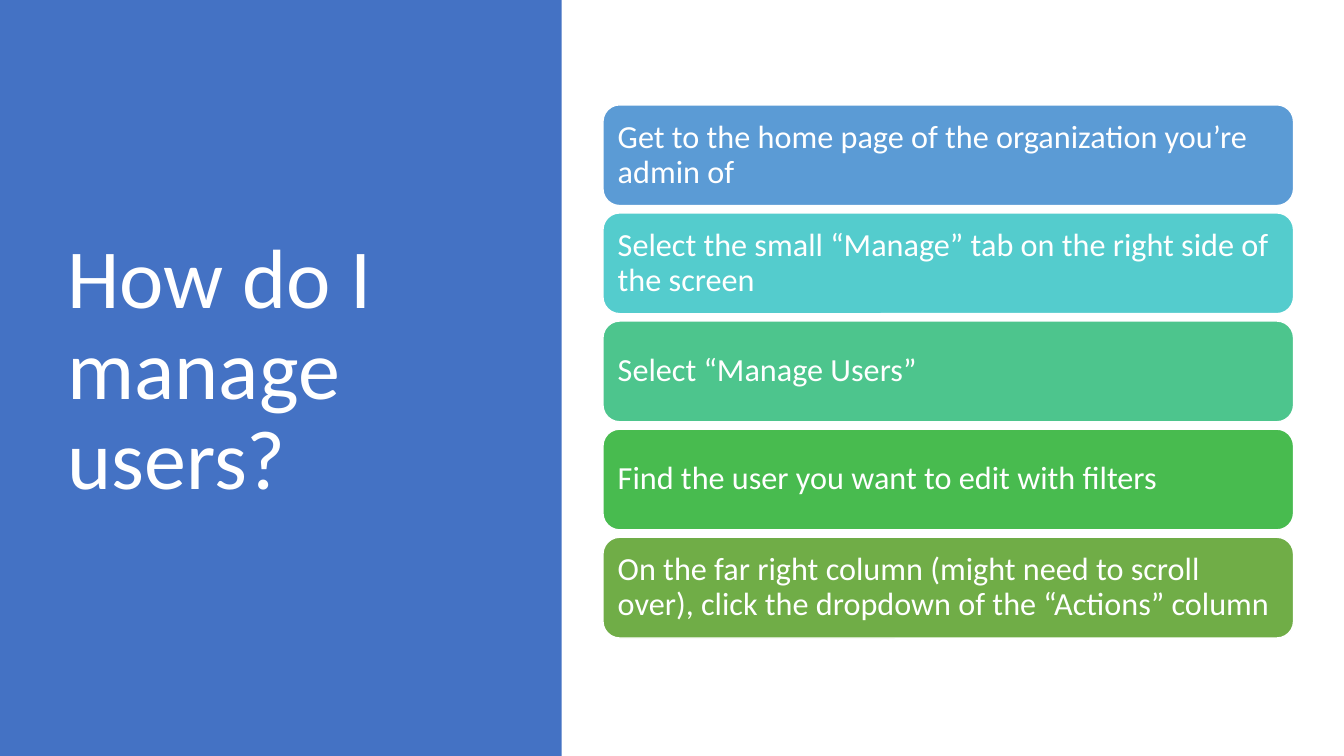
from pptx import Presentation
from pptx.dml.color import RGBColor
from pptx.enum import shapes, text
from pptx.util import Inches, Pt

WHITE = RGBColor(0xFF, 0xFF, 0xFF)
BLUE = RGBColor(0x44, 0x72, 0xC4)
SKY = RGBColor(0x5B, 0x9B, 0xD5)
AQUA = RGBColor(0x54, 0xCC, 0xCD)
MINT = RGBColor(0x4D, 0xC5, 0x8D)
GREEN = RGBColor(0x48, 0xBB, 0x4F)
OLIVE = RGBColor(0x70, 0xAD, 0x47)

TITLE = "How do I manage users?"
STEPS = [
    ("Get to the home page of the organization you’re admin of", SKY),
    ("Select the small “Manage” tab on the right side of the screen", AQUA),
    ("Select “Manage Users”", MINT),
    ("Find the user you want to edit with filters", GREEN),
    ("On the far right column (might need to scroll over), "
     "click the dropdown of the “Actions” column", OLIVE),
]
LEFT, TOP, WIDTH, HEIGHT, PITCH = 5.98, 1.04, 6.85, 1, 1.0725


def write(shape, words, size):
    frame = shape.text_frame
    frame.text = words
    frame.word_wrap = True
    frame.auto_size = text.MSO_AUTO_SIZE.NONE
    frame.vertical_anchor = text.MSO_ANCHOR.MIDDLE
    para = frame.paragraphs[0]
    para.alignment = text.PP_ALIGN.LEFT
    para.line_spacing = 0.9
    font = para.runs[0].font
    font.name = "Calibri"
    font.size = Pt(size)
    font.color.rgb = WHITE
    return frame


def block(slide, kind, box, fill):
    shape = slide.shapes.add_shape(kind, *map(Inches, box))
    shape.shadow.inherit = False
    shape.fill.solid()
    shape.fill.fore_color.rgb = fill
    shape.line.fill.background()
    return shape


def main():
    deck = Presentation()
    deck.slide_width, deck.slide_height = Inches(13.33), Inches(7.5)
    slide = deck.slides.add_slide(deck.slide_layouts[5])

    title = slide.shapes.title
    title.left, title.top = Inches(0.57), Inches(0.68)
    title.width, title.height = Inches(4.16), Inches(6.02)
    write(title, TITLE, 60)

    panel = block(slide, shapes.MSO_SHAPE.RECTANGLE, (0, 0, 5.57, 7.5), BLUE)
    title.element.addprevious(panel.element)

    for i, (words, fill) in enumerate(STEPS):
        box = (LEFT, TOP + i * PITCH, WIDTH, HEIGHT)
        step = block(slide, shapes.MSO_SHAPE.ROUNDED_RECTANGLE, box, fill)
        step.line.color.rgb = WHITE
        step.line.width = Pt(1)
        frame = write(step, words, 23)
        frame.margin_left = frame.margin_right = Inches(0.1)
        frame.margin_top = frame.margin_bottom = Inches(0.1)

    deck.save("out.pptx")


if __name__ == "__main__":
    main()
